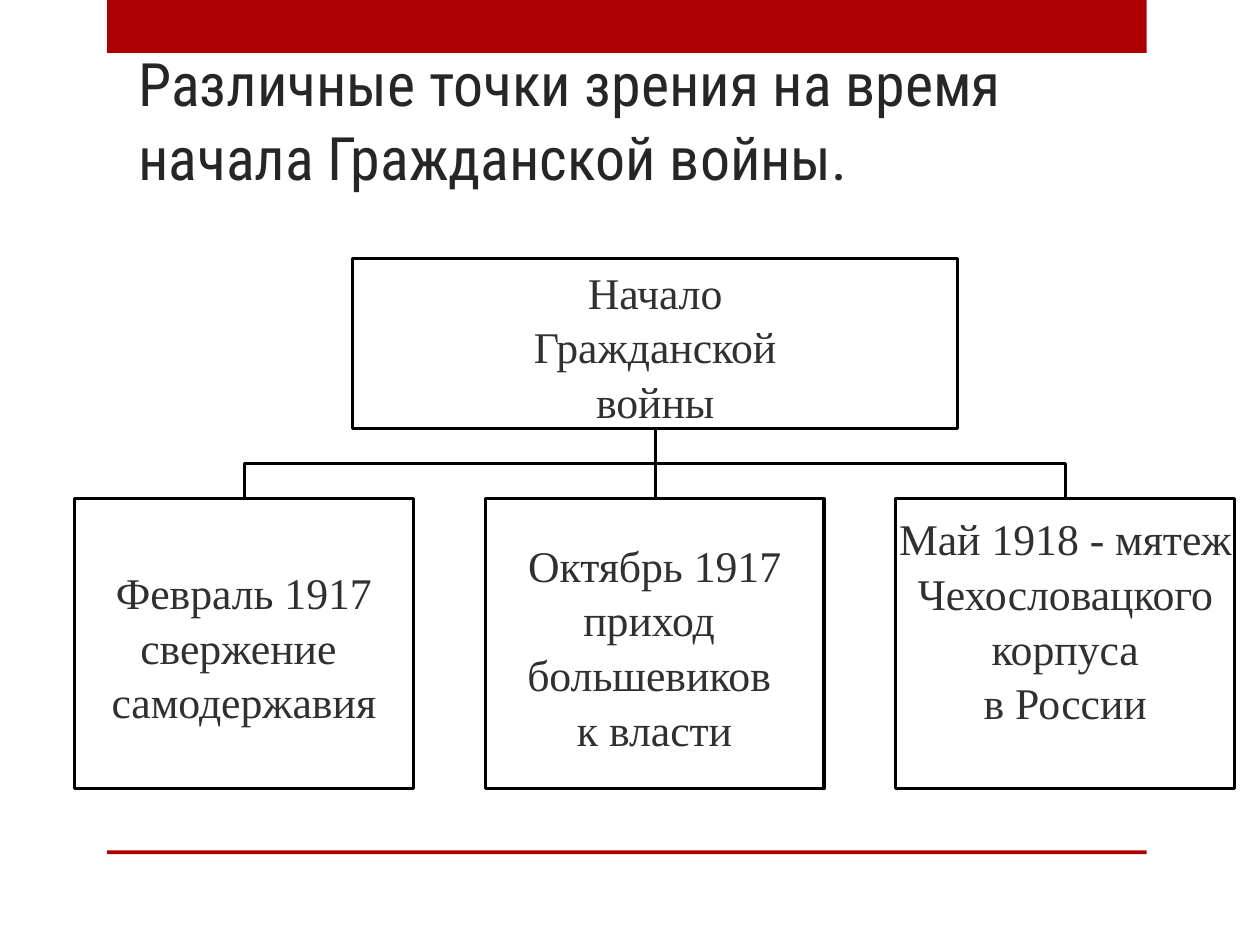
from lxml import etree
from pptx import Presentation
from pptx.dml.color import RGBColor
from pptx.enum.shapes import MSO_CONNECTOR, MSO_SHAPE
from pptx.enum.text import MSO_ANCHOR, PP_ALIGN
from pptx.oxml.ns import qn
from pptx.util import Inches, Pt

RECTANGLE = MSO_SHAPE.RECTANGLE
STRAIGHT = MSO_CONNECTOR.STRAIGHT
MIDDLE, BOTTOM = MSO_ANCHOR.MIDDLE, MSO_ANCHOR.BOTTOM
LEFT, CENTER = PP_ALIGN.LEFT, PP_ALIGN.CENTER


def color(hex_string):
    return RGBColor.from_string(hex_string)


def write(frame, lines, *, font, size, ink, align, anchor, insets):
    frame.word_wrap = True
    frame.vertical_anchor = anchor
    (frame.margin_left, frame.margin_top,
     frame.margin_right, frame.margin_bottom) = map(Inches, insets)
    for index, line in enumerate(lines):
        paragraph = frame.add_paragraph() if index else frame.paragraphs[0]
        paragraph.text = line
        paragraph.alignment = align
        paragraph.line_spacing = 1.04
        paragraph.font.name = font
        paragraph.font.size = Pt(size)
        paragraph.font.color.rgb = color(ink)


class Deck:
    accent = "AD0101"
    outline = "000000"
    paper = "FFFFFF"
    stroke = 1.75
    title_format = dict(font="Roboto Condensed", size=34.2, ink="262626",
                        align=LEFT, anchor=BOTTOM, insets=(0.1, 0.05, 0.1, 0.02))
    box_format = dict(font="Times New Roman", size=25, ink="303030",
                      align=CENTER, anchor=MIDDLE)

    def __init__(self, slide):
        self.slide = slide

    def draw_line(self, line):
        line.color.rgb = color(self.outline)
        line.width = Pt(self.stroke)

    def rectangle(self, bounds, fill):
        shape = self.slide.shapes.add_shape(RECTANGLE, *map(Inches, bounds))
        shape.shadow.inherit = False
        shape.fill.solid()
        shape.fill.fore_color.rgb = color(fill)
        shape.line.fill.background()
        return shape

    def title(self, bounds, text):
        heading = self.slide.shapes.add_textbox(*map(Inches, bounds))
        write(heading.text_frame, [text], **self.title_format)

    def box(self, bounds, lines, bottom_inset=0.02):
        node = self.rectangle(bounds, self.paper)
        self.draw_line(node.line)
        write(node.text_frame, lines, insets=(0.02, 0.05, 0.02, bottom_inset),
              **self.box_format)

    def straight(self, start, end):
        stem = self.slide.shapes.add_connector(STRAIGHT, *map(Inches, start + end))
        self.draw_line(stem.line)
        etree.SubElement(stem._element.spPr, qn("a:effectLst"))

    def elbow(self, start, end):
        middle = (start[1] + end[1]) / 2
        corners = [start, (start[0], middle), (end[0], middle), end]
        points = [(Inches(x), Inches(y)) for x, y in corners]
        builder = self.slide.shapes.build_freeform(*points[0])
        builder.add_line_segments(points[1:], close=False)
        branch = builder.convert_to_shape()
        branch.shadow.inherit = False
        branch.fill.background()
        self.draw_line(branch.line)


def main():
    presentation = Presentation()
    presentation.slide_width, presentation.slide_height = Inches(10), Inches(7.5)
    deck = Deck(presentation.slides.add_slide(presentation.slide_layouts[6]))

    deck.rectangle((0.85, 0, 8.25, 0.42), deck.accent)
    deck.rectangle((0.85, 6.75, 8.25, 0.03), deck.accent)
    deck.title((1, 0.3, 8.5, 1.25),
               "Различные точки зрения на время начала Гражданской войны.")

    views = [
        (["Февраль 1917", "свержение ", "самодержавия"], 0.02),
        (["Октябрь 1917", "приход ", "большевиков ", "к власти"], 0.02),
        (["Май 1918 - мятеж", "Чехословацкого", "корпуса", "в России"], 0.44),
    ]
    view_left, view_top, view_width, view_height, pitch = 0.59, 3.96, 2.69, 2.3, 3.26
    root = (5.2, 3.4)
    centers = [root[0] + (index - 1) * pitch for index in range(len(views))]

    for center in centers:
        link = deck.straight if center == root[0] else deck.elbow
        link(root, (center, view_top))

    deck.box((2.8, 2.05, 4.8, 1.35), ["Начало", "Гражданской", "войны"])
    for index, (lines, bottom_inset) in enumerate(views):
        deck.box((view_left + index * pitch, view_top, view_width, view_height),
                 lines, bottom_inset)

    presentation.save("out.pptx")


if __name__ == "__main__":
    main()
